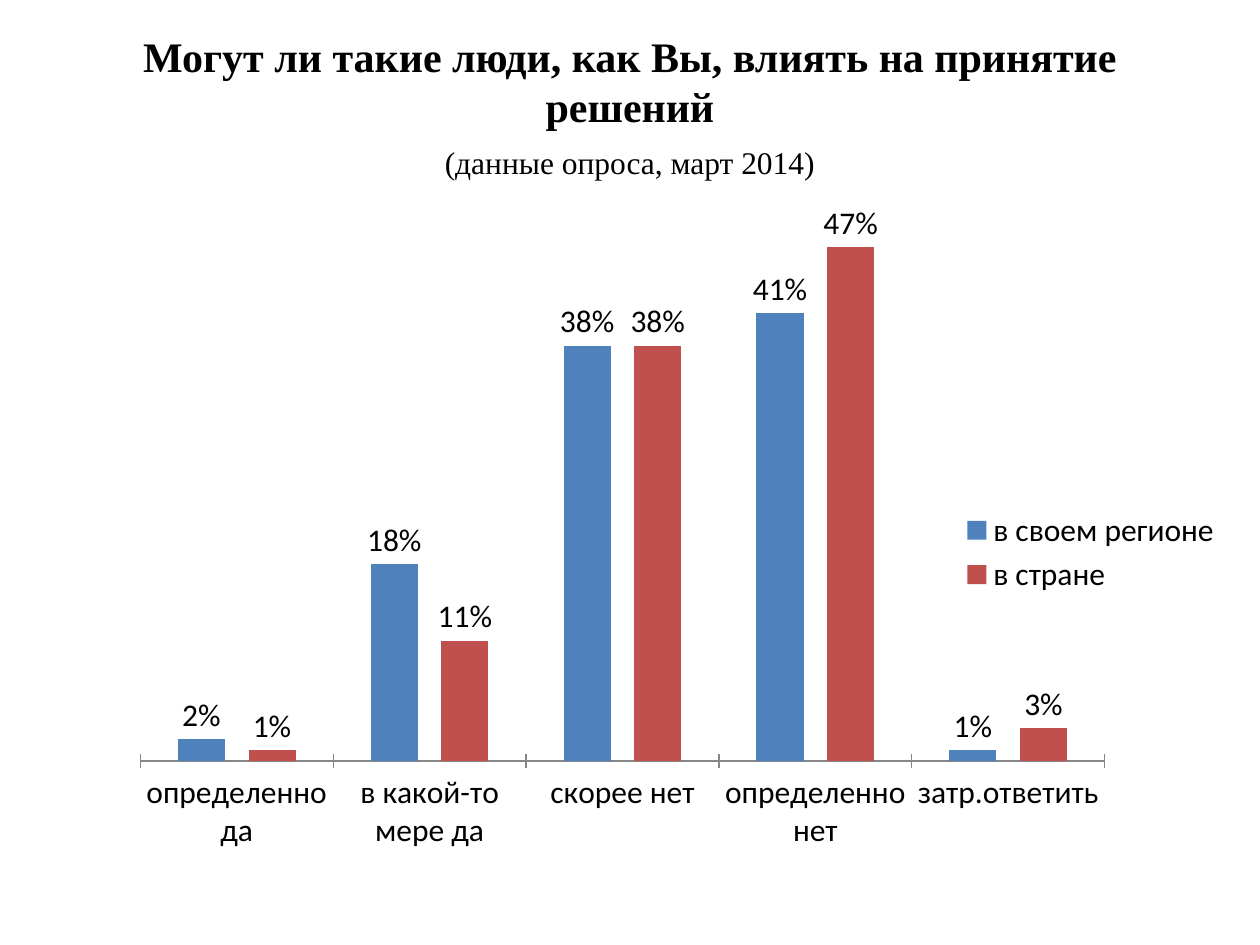
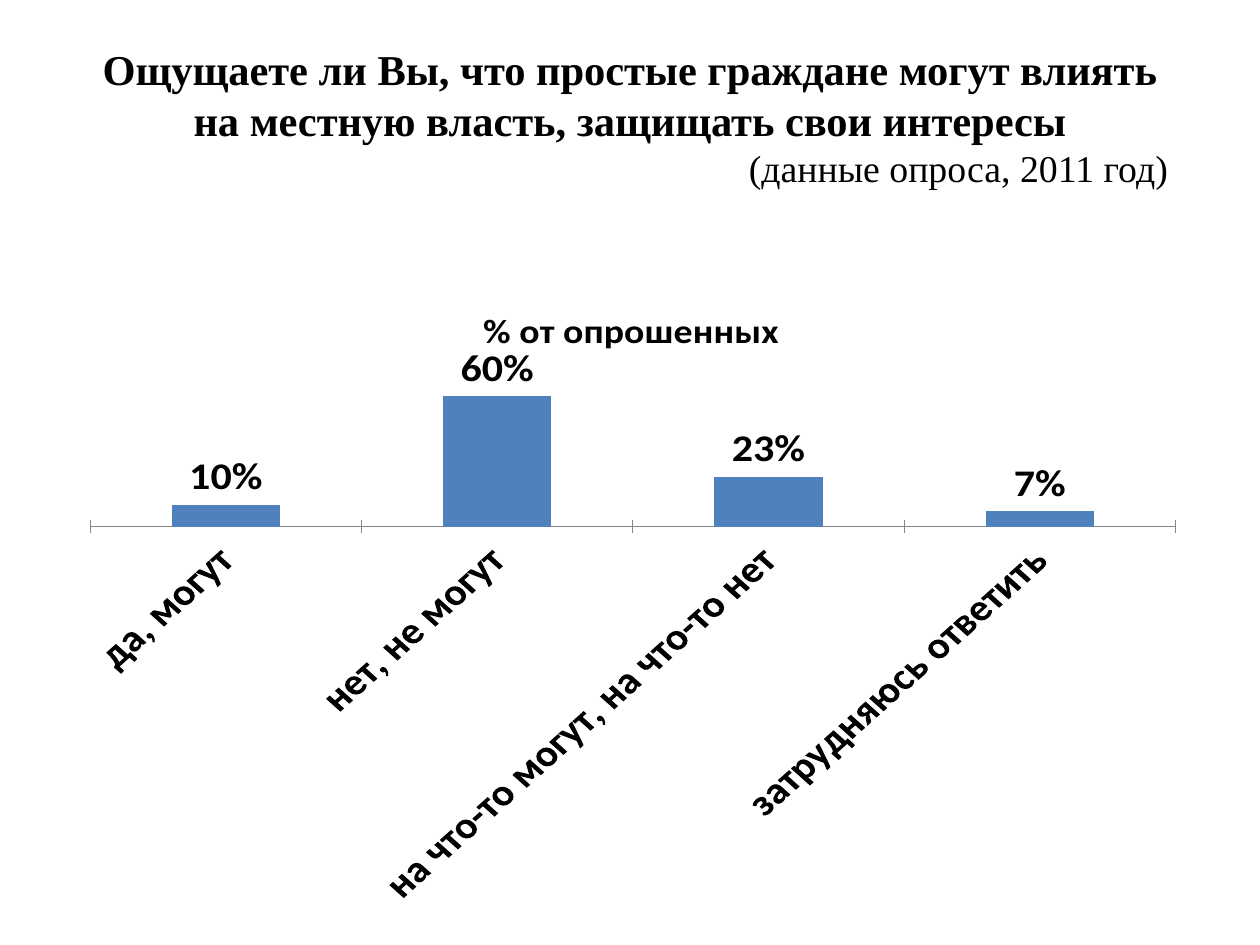
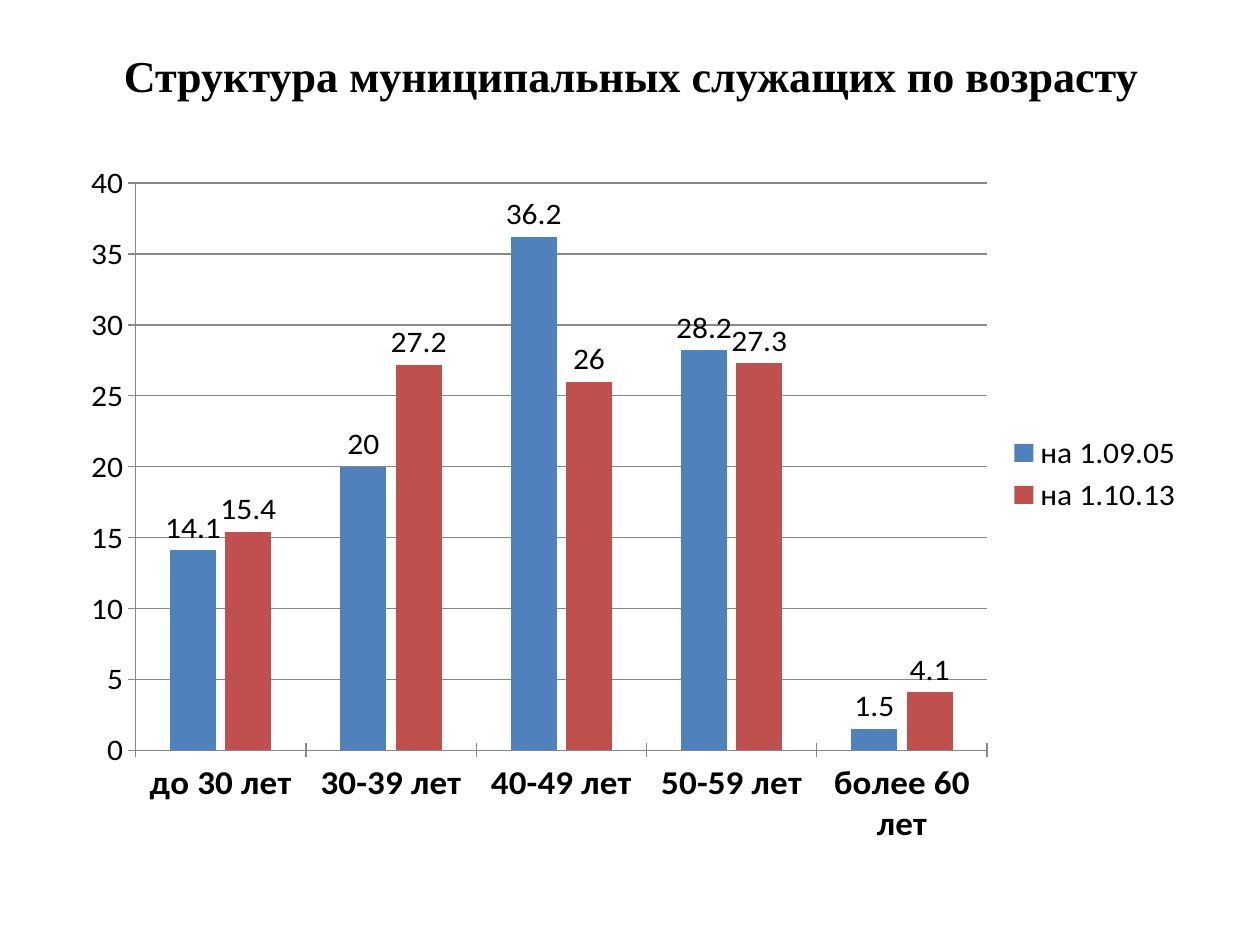
from dataclasses import dataclass
from typing import Any, NamedTuple, Optional

from lxml.etree import SubElement
from pptx import Presentation
from pptx.chart.data import CategoryChartData
from pptx.dml.color import RGBColor as RGB
from pptx.enum.chart import XL_CHART_TYPE as CT, XL_LABEL_POSITION as LP
from pptx.enum.chart import XL_LEGEND_POSITION as LEG, XL_TICK_MARK as TICK
from pptx.enum.text import MSO_ANCHOR as ANCHOR, PP_ALIGN as ALIGN
from pptx.oxml.ns import qn
from pptx.util import Pt

EMU_PER_PX = 9144


@dataclass(frozen=True)
class Theme:
    text: RGB = RGB(0, 0, 0)
    paper: RGB = RGB(255, 255, 255)
    axis: RGB = RGB(0x87, 0x87, 0x87)
    series: tuple[RGB, ...] = (RGB(0x4F, 0x81, 0xBD), RGB(0xC0, 0x50, 0x4D))
    title_font: str = "Times New Roman"
    chart_font: str = "Calibri"
    chart_size: float = 18
    chart_title_size: float = 21.6
    axis_width: float = 0.75


THEME = Theme()


class Box(NamedTuple):
    left: int
    top: int
    width: int
    height: int

    def emu(self) -> list[int]:
        return [px(v) for v in self]


@dataclass(frozen=True)
class Note:
    text: str
    size: float
    align: Any = ALIGN.CENTER
    before: float = 0
    right_indent: int = 0


@dataclass(frozen=True)
class Heading:
    box: Box
    text: str
    size: float
    note: Optional[Note] = None


@dataclass(frozen=True)
class Columns:
    box: Box
    cats: tuple[str, ...]
    series: dict[str, tuple[float, ...]]
    fmt: str = "0%"
    gap: int = 150
    overlap: int = 0
    title: str = ""
    legend: bool = False
    value_axis: bool = False
    cat_font: Optional[dict[str, Any]] = None
    label_font: Optional[dict[str, Any]] = None
    cat_angle: int = 0
    plot: Optional[dict[str, float]] = None
    legend_at: Optional[dict[str, float]] = None


class Page(NamedTuple):
    heading: Heading
    columns: Columns


PAGES = (
    Page(
        Heading(
            Box(50, 13, 900, 142),
            "Могут ли такие люди, как Вы, влиять на принятие решений",
            24,
            Note("(данные опроса, март 2014)", 18, before=7),
        ),
        Columns(
            Box(50, 155, 930, 567),
            ("определенно да", "в какой-то мере да", "скорее нет",
             "определенно нет", "затр.ответить"),
            {"в своем регионе": (0.02, 0.18, 0.38, 0.41, 0.01),
             "в стране": (0.01, 0.11, 0.38, 0.47, 0.03)},
            gap=160, overlap=-50, legend=True,
            plot=dict(x=0.066, y=0.027, w=0.823, h=0.765),
        ),
    ),
    Page(
        Heading(
            Box(50, 30, 900, 125),
            "Ощущаете ли Вы, что простые граждане могут влиять "
            "на местную власть, защищать свои интересы",
            24.3,
            Note("(данные опроса, 2011 год)", 21.6, ALIGN.RIGHT, right_indent=13),
        ),
        Columns(
            Box(51, 225, 900, 495),
            ("да, могут", "нет, не могут", "на что-то могут, на что-то нет",
             "затрудняюсь ответить"),
            {"% от опрошенных": (0.1, 0.6, 0.23, 0.07)},
            title="% от опрошенных", cat_angle=-45,
            cat_font=dict(size=Pt(24), bold=True),
            label_font=dict(size=Pt(24), bold=True),
        ),
    ),
    Page(
        Heading(
            Box(51, 13, 900, 93),
            "Структура муниципальных служащих по возрасту",
            25.2,
        ),
        Columns(
            Box(50, 131, 900, 539),
            ("до 30 лет", "30-39 лет", "40-49 лет", "50-59 лет", "более 60 лет"),
            {"на 1.09.05": (14.1, 20, 36.2, 28.2, 1.5),
             "на 1.10.13": (15.4, 27.2, 26, 27.3, 4.1)},
            fmt="General", overlap=-20, legend=True, value_axis=True,
            cat_font=dict(size=Pt(20), bold=True),
            plot=dict(x=0.064, y=0.028, w=0.751, h=0.882),
            legend_at=dict(x=0.83, y=0.41),
        ),
    ),
)


def px(value: int) -> int:
    return value * EMU_PER_PX


def put(obj: Any, values: dict[str, Any]) -> None:
    for name, value in values.items():
        setattr(obj, name, value)


def style_font(font: Any, name: str, size: float, bold: bool = False) -> None:
    put(font, dict(name=name, size=Pt(size), bold=bold))
    font.color.rgb = THEME.text


def style_line(line: Any) -> None:
    line.color.rgb = THEME.axis
    line.width = Pt(THEME.axis_width)


def set_layout(parent: Any, index: int, values: dict[str, float], inner: bool) -> None:
    for old in parent.findall(qn("c:layout")):
        parent.remove(old)
    layout = SubElement(parent, qn("c:layout"))
    parent.insert(index, layout)
    manual = SubElement(layout, qn("c:manualLayout"))
    if inner:
        SubElement(manual, qn("c:layoutTarget")).set("val", "inner")
    for key in ("x", "y"):
        SubElement(manual, qn(f"c:{key}Mode")).set("val", "edge")
    for key, value in values.items():
        SubElement(manual, qn(f"c:{key}")).set("val", str(value))


def add_heading(s: Any, heading: Heading) -> None:
    tf = s.shapes.add_textbox(*heading.box.emu()).text_frame
    put(tf, dict(word_wrap=True, vertical_anchor=ANCHOR.MIDDLE))
    p = tf.paragraphs[0]
    p.alignment = ALIGN.CENTER
    r = p.add_run()
    r.text = heading.text
    style_font(r.font, THEME.title_font, heading.size, True)
    note = heading.note
    if note:
        p = tf.add_paragraph()
        put(p, dict(alignment=note.align, space_before=Pt(note.before)))
        p._p.get_or_add_pPr().set("marR", str(px(note.right_indent)))
        r = p.add_run()
        r.text = note.text
        style_font(r.font, THEME.title_font, note.size)


def style_axes(chart: Any, spec: Columns) -> None:
    cat, val = chart.category_axis, chart.value_axis
    for axis in (cat, val):
        axis.major_tick_mark = TICK.CROSS
        style_line(axis.format.line)
    put(cat.tick_labels.font, spec.cat_font or {})
    if spec.cat_angle:
        body = cat._element.find(qn("c:txPr")).find(qn("a:bodyPr"))
        body.set("rot", str(spec.cat_angle * 60000))
    put(val, dict(visible=spec.value_axis, has_major_gridlines=spec.value_axis))
    put(val.tick_labels, dict(number_format=spec.fmt, number_format_is_linked=False))
    if spec.value_axis:
        style_line(val.major_gridlines.format.line)


def add_columns(s: Any, spec: Columns) -> None:
    data = CategoryChartData(number_format=spec.fmt)
    data.categories = spec.cats
    for name, values in spec.series.items():
        data.add_series(name, values)
    chart = s.shapes.add_chart(CT.COLUMN_CLUSTERED, *spec.box.emu(), data).chart
    style_font(chart.font, THEME.chart_font, THEME.chart_size)
    put(chart, dict(has_title=bool(spec.title), has_legend=spec.legend))
    if spec.title:
        tf = chart.chart_title.text_frame
        tf.text = spec.title
        style_font(tf.paragraphs[0].runs[0].font, THEME.chart_font,
                   THEME.chart_title_size, True)
    if spec.legend:
        put(chart.legend, dict(position=LEG.RIGHT, include_in_layout=False))
        if spec.legend_at:
            set_layout(chart.legend._element, 1, spec.legend_at, False)
    style_axes(chart, spec)
    plot = chart.plots[0]
    put(plot, dict(gap_width=spec.gap, overlap=spec.overlap,
                   vary_by_categories=False, has_data_labels=True))
    put(plot.data_labels, dict(show_value=True, position=LP.OUTSIDE_END,
                               number_format=spec.fmt, number_format_is_linked=False))
    put(plot.data_labels.font, spec.label_font or {})
    for series, color in zip(plot.series, THEME.series):
        series.format.fill.solid()
        series.format.fill.fore_color.rgb = color
    if spec.plot:
        set_layout(chart._chartSpace.chart.plotArea, 0, spec.plot, True)


def main() -> None:
    prs = Presentation()
    put(prs, dict(slide_width=px(1000), slide_height=px(750)))
    for page in PAGES:
        s = prs.slides.add_slide(prs.slide_layouts[6])
        s.background.fill.solid()
        s.background.fill.fore_color.rgb = THEME.paper
        add_heading(s, page.heading)
        add_columns(s, page.columns)
    prs.save("out.pptx")


if __name__ == "__main__":
    main()
